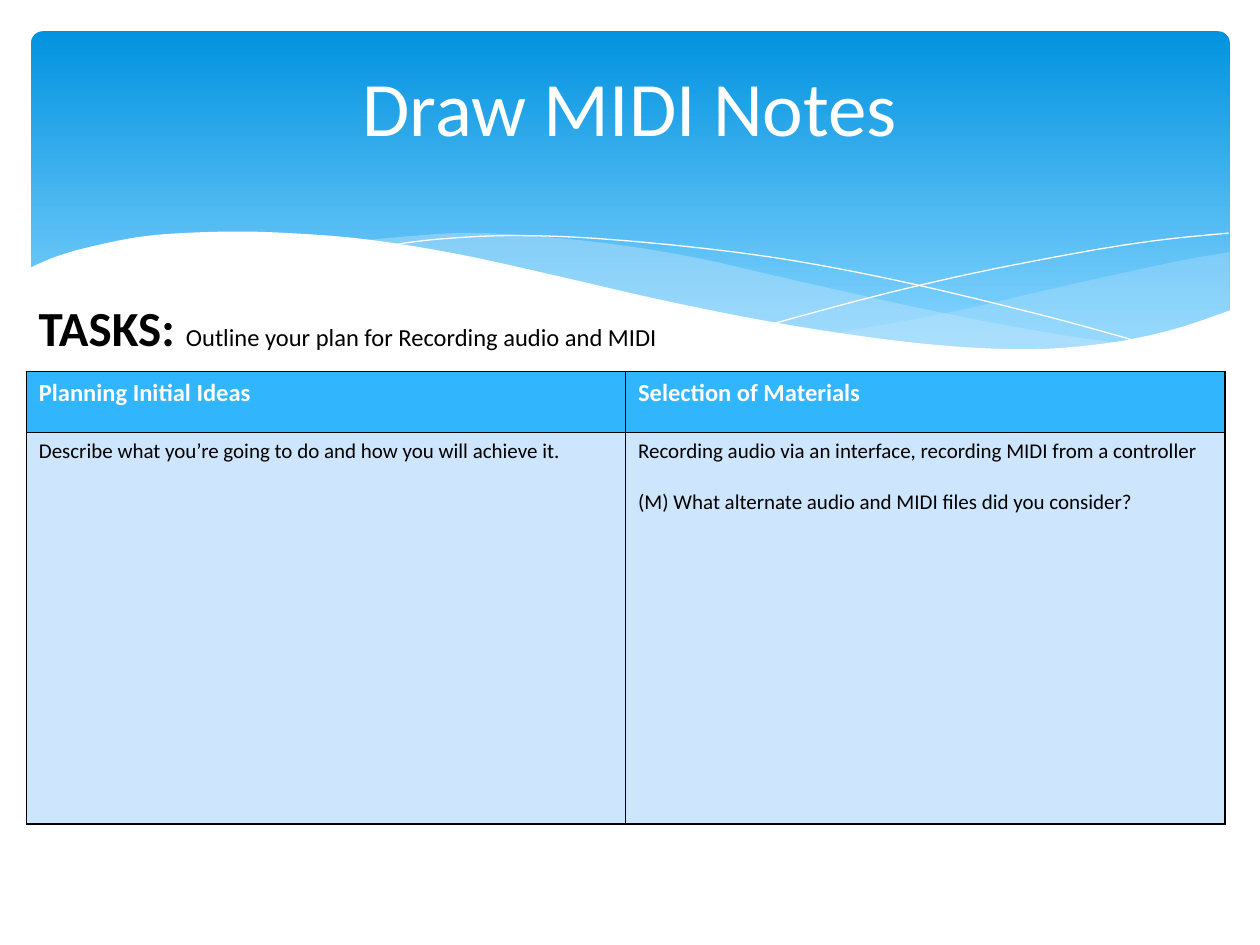
from dataclasses import dataclass

from lxml import etree
from pptx import Presentation
from pptx.dml.color import RGBColor
from pptx.enum.shapes import MSO_SHAPE
from pptx.enum.text import MSO_ANCHOR, MSO_AUTO_SIZE, PP_ALIGN
from pptx.oxml.ns import qn
from pptx.util import Cm, Pt

ROUNDED = MSO_SHAPE.ROUNDED_RECTANGLE
MIDDLE = MSO_ANCHOR.MIDDLE
CENTER = PP_ALIGN.CENTER
GROW = MSO_AUTO_SIZE.SHAPE_TO_FIT_TEXT
NO_FIT = MSO_AUTO_SIZE.NONE
TITLE_ONLY = 5
FONT = "Calibri"
WHITE = "FFFFFF"
BLACK = "000000"
PALE_WAVE = "C6E7FC"
STEPS = 6

Point = tuple[float, float]
Curve = list[Point]


@dataclass
class Wave:
    curves: list[Curve]
    color: str
    opacity: int = 100
    filled: bool = True


@dataclass
class Column:
    heading: str
    paragraphs: list[str]


WAVES = [
    Wave([
        [(24.79, 5.08), (23.77, 5.26), (22.25, 5.59), (21.13, 5.84), (19.13, 6.3), (16.79, 6.73)],
        [(16.79, 6.73), (18.26, 6.88), (19.53, 7.03), (20.68, 7.06), (21.92, 6.99),
         (22.99, 6.83), (23.93, 6.58), (24.79, 6.27)],
    ], PALE_WAVE, 29),
    Wave([
        [(22.68, 6.93), (21.26, 6.73), (18.82, 6.27), (15.98, 5.64), (14.1, 5.21),
         (12.42, 4.93), (10.67, 4.75), (9.17, 4.7), (7.26, 4.85)],
        [(7.26, 4.85), (9.19, 5.16), (11.4, 5.64), (13.46, 6.1), (15.7, 6.55),
         (17.65, 6.86), (19.33, 7.04), (20.5, 7.06), (22.68, 6.93)],
    ], PALE_WAVE, 40),
    Wave([
        [(7.85, 4.95), (8.74, 4.83), (10.19, 4.75), (11.91, 4.8), (14.12, 5),
         (16.15, 5.28), (18.47, 5.74), (21.11, 6.38), (23.04, 6.91)],
    ], WHITE, filled=False),
    Wave([
        [(15.57, 6.53), (17.65, 5.97), (19.71, 5.49), (22, 5.05), (23.47, 4.83), (24.77, 4.7)],
    ], WHITE, filled=False),
    Wave([
        [(24.82, 6.25), (23.62, 6.65), (22.23, 6.93), (20.55, 7.04), (18.44, 6.91),
         (15.9, 6.55), (13.44, 6.07), (11.35, 5.59), (9.27, 5.13), (7.42, 4.83),
         (5.84, 4.7), (4.5, 4.67), (3.02, 4.75), (1.93, 4.95), (1.17, 5.16), (0.58, 5.41)],
        [(0.58, 8.36), (24.82, 8.36)],
    ], WHITE),
]

COLUMNS = [
    Column("Planning Initial Ideas",
           ["Describe what you’re going to do and how you will achieve it."]),
    Column("Selection of Materials",
           ["Recording audio via an interface, recording MIDI from a controller",
            "(M) What alternate audio and MIDI files did you consider?"]),
]


def rgb(color: str) -> RGBColor:
    return RGBColor.from_string(color)


def smooth(curve: Curve) -> Curve:
    padded = [curve[0], *curve, curve[-1]]
    points = [curve[0]]
    for a, b, c, d in zip(padded, padded[1:], padded[2:], padded[3:]):
        for step in range(1, STEPS + 1):
            t = step / STEPS
            points.append(tuple(
                q + t * ((r - p) + t * ((2 * p - 5 * q + 4 * r - s)
                                        + t * (3 * q - p - 3 * r + s))) / 2
                for p, q, r, s in zip(a, b, c, d)))
    return points


def add_wave(slide, wave: Wave) -> None:
    points = [(Cm(x), Cm(y)) for curve in wave.curves for x, y in smooth(curve)]
    builder = slide.shapes.build_freeform(*points[0])
    builder.add_line_segments(points[1:], close=wave.filled)
    shape = builder.convert_to_shape()
    shape.shadow.inherit = False
    if not wave.filled:
        shape.fill.background()
        shape.line.color.rgb = rgb(wave.color)
        shape.line.width = Pt(0)
        return
    shape.line.fill.background()
    shape.fill.solid()
    shape.fill.fore_color.rgb = rgb(wave.color)
    if wave.opacity < 100:
        color = shape._element.spPr.find(qn("a:solidFill"))[0]
        etree.SubElement(color, qn("a:alpha"), val=str(wave.opacity * 1000))


def add_banner(slide) -> None:
    banner = slide.shapes.add_shape(ROUNDED, Cm(0.63), Cm(0.63), Cm(24.16), Cm(6.86))
    banner.adjustments[0] = 0.034
    banner.shadow.inherit = False
    banner.line.fill.background()
    banner.fill.gradient()
    banner.fill.gradient_angle = 270
    stops = banner.fill.gradient_stops
    for stop, position, color in zip(stops, (0, 0.9), ("0293E0", "83D3FE")):
        stop.position = position
        stop.color.rgb = rgb(color)


def add_run(paragraph, text: str, size: float, color: str, bold: bool = False) -> None:
    run = paragraph.add_run()
    run.text = text
    run.font.name = FONT
    run.font.size = Pt(size)
    run.font.bold = bold
    run.font.color.rgb = rgb(color)


def format_title(slide) -> None:
    title = slide.shapes.title
    title.left, title.top, title.width, title.height = Cm(1.27), Cm(0.94), Cm(22.86), Cm(2.39)
    slide.shapes._spTree.append(title._element)
    frame = title.text_frame
    frame.auto_size = NO_FIT
    frame.vertical_anchor = MIDDLE
    frame.paragraphs[0].alignment = CENTER
    add_run(frame.paragraphs[0], "Draw MIDI Notes", 44, WHITE)


def add_tasks(slide) -> None:
    frame = slide.shapes.add_textbox(Cm(0.53), Cm(5.87), Cm(20.37), Cm(1.45)).text_frame
    frame.word_wrap = True
    frame.auto_size = GROW
    paragraph = frame.paragraphs[0]
    add_run(paragraph, "TASKS: ", 28, BLACK, True)
    add_run(paragraph, "Outline your plan for Recording audio and MIDI", 14, BLACK)


def format_cell(cell, color: str) -> None:
    properties = cell._tc.get_or_add_tcPr()
    for side in ("a:lnL", "a:lnR", "a:lnT", "a:lnB"):
        border = etree.SubElement(properties, qn(side), w=str(Pt(1)))
        fill = etree.SubElement(border, qn("a:solidFill"))
        etree.SubElement(fill, qn("a:srgbClr"), val=BLACK)
    cell.fill.solid()
    cell.fill.fore_color.rgb = rgb(color)


def add_plan_table(slide, columns: list[Column]) -> None:
    table = slide.shapes.add_table(
        2, len(columns), Cm(0.53), Cm(7.49), Cm(24.16), Cm(9.12)).table
    table.rows[0].height, table.rows[1].height = Cm(1.23), Cm(7.89)
    for index, column in enumerate(columns):
        heading, body = table.cell(0, index), table.cell(1, index)
        format_cell(heading, "31B6FD")
        format_cell(body, "CEE5FE")
        add_run(heading.text_frame.paragraphs[0], column.heading, 14, WHITE, True)
        frame = body.text_frame
        for number, text in enumerate(column.paragraphs):
            paragraph = frame.add_paragraph() if number else frame.paragraphs[0]
            if number:
                paragraph.space_before = Pt(14.6)
            add_run(paragraph, text, 12, BLACK)


def main() -> None:
    presentation = Presentation()
    presentation.slide_width, presentation.slide_height = Cm(25.4), Cm(19.05)
    slide = presentation.slides.add_slide(presentation.slide_layouts[TITLE_ONLY])
    add_banner(slide)
    for wave in WAVES:
        add_wave(slide, wave)
    format_title(slide)
    add_tasks(slide)
    add_plan_table(slide, COLUMNS)
    presentation.save("out.pptx")


if __name__ == "__main__":
    main()
